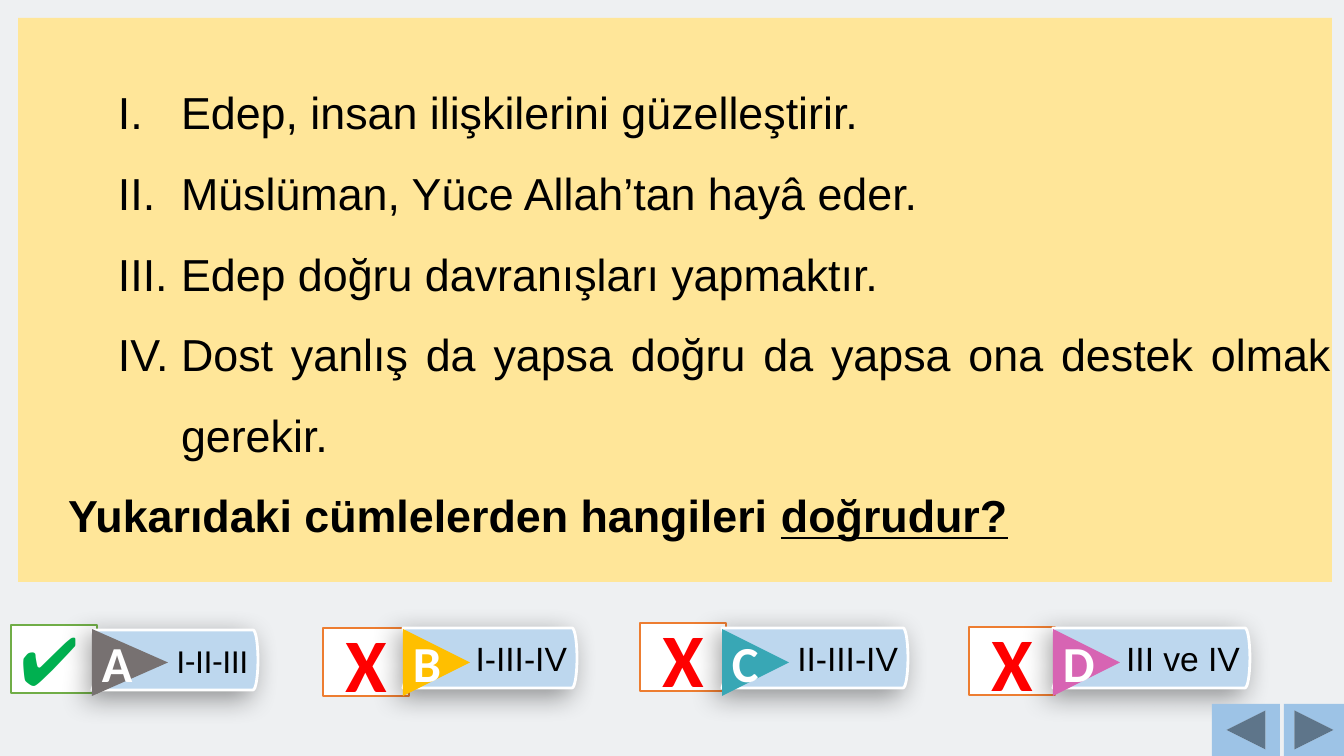
"""Build a multiple-choice quiz slide with four marked answers."""
from math import cos, pi, sin

from lxml.etree import SubElement
from pptx import Presentation
from pptx.dml.color import RGBColor
from pptx.enum.shapes import MSO_SHAPE
from pptx.enum.text import MSO_ANCHOR, PP_ALIGN
from pptx.oxml.ns import qn
from pptx.util import Pt

SCALE = 914400 / 100.8
STATEMENTS = [
    "Edep, insan ilişkilerini güzelleştirir.",
    "Müslüman, Yüce Allah’tan hayâ eder.",
    "Edep doğru davranışları yapmaktır.",
    "Dost yanlış da yapsa doğru da yapsa ona destek olmak gerekir.",
]
CHECK = ("✔", 48, "00B050", "70AD47", False, PP_ALIGN.LEFT)
CROSS = ("X", 54, "FF0000", "ED7D31", True, PP_ALIGN.CENTER)
OPTIONS = [
    ("A", "I-II-III", "Calibri", "777171", CHECK, (11, 625), (92, 630, 166), (92, 629, 76)),
    ("B", "I-III-IV", "Arial", "FFBF00", CROSS, (323, 628), (403, 628, 174), (403, 629, 67)),
    ("C", "II-III-IV", "Arial", "38A7B5", CROSS, (640, 623), (722, 628, 186), (722, 629, 67)),
    ("D", "III ve IV", "Arial", "D764B3", CROSS, (969, 627), (1053, 628, 197), (1053, 629, 67)),
]


def px(n):
    """Turn pixels into EMU."""
    return round(n * SCALE)


def color(value):
    """Turn a hex string into a colour."""
    return RGBColor.from_string(value)


def style(sp, fill, line=None, width=1):
    """Give a shape a plain fill, an optional line and no shadow."""
    sp.shadow.inherit = False
    sp.fill.solid()
    sp.fill.fore_color.rgb = color(fill)
    if line:
        sp.line.color.rgb = color(line)
        sp.line.width = Pt(width)
    else:
        sp.line.fill.background()


def add_box(shapes, kind, x, y, w, h, fill, line=None):
    """Add a preset shape."""
    sp = shapes.add_shape(kind, px(x), px(y), px(w), px(h))
    style(sp, fill, line)
    return sp


def add_run(p, text, size, font, ink, bold=False, underline=False):
    """Add one formatted run to a paragraph."""
    r = p.add_run()
    r.text = text
    r.font.size = Pt(size)
    r.font.name = font
    r.font.color.rgb = color(ink)
    r.font.bold = bold
    r.font.underline = underline


def add_label(sp, text, size, font, ink, bold=False, align=PP_ALIGN.CENTER):
    """Put one vertically centred line of text in a shape."""
    tf = sp.text_frame
    tf.word_wrap = True
    tf.vertical_anchor = MSO_ANCHOR.MIDDLE
    p = tf.paragraphs[0]
    p.alignment = align
    add_run(p, text, size, font, ink, bold)


def set_indent(p, left, first=0):
    """Set the left margin and first-line indent of a paragraph."""
    pPr = p._p.get_or_add_pPr()
    pPr.set("marL", str(px(left)))
    pPr.set("indent", str(px(first)))
    return pPr


def add_question(s):
    """Add the panel with numbered statements and the question."""
    sp = add_box(s.shapes, MSO_SHAPE.RECTANGLE, 18, 18, 1314, 564, "FFE699")
    tf = sp.text_frame
    tf.word_wrap = True
    tf.vertical_anchor = MSO_ANCHOR.MIDDLE
    tf.margin_left = tf.margin_right = tf.margin_top = tf.margin_bottom = 0
    for i, text in enumerate(STATEMENTS):
        p = tf.add_paragraph() if i else tf.paragraphs[0]
        p.alignment = PP_ALIGN.JUSTIFY
        p.line_spacing = 1.5
        pPr = set_indent(p, 163, -63)
        SubElement(pPr, qn("a:buFont"), typeface="+mj-lt")
        SubElement(pPr, qn("a:buAutoNum"), type="romanUcPeriod")
        add_run(p, text, 32, "Arial", "000000")
    p = tf.add_paragraph()
    p.alignment = PP_ALIGN.LEFT
    p.line_spacing = 1.5
    set_indent(p, 50)
    add_run(p, "Yukarıdaki cümlelerden hangileri ", 32, "Arial", "000000", True)
    add_run(p, "doğrudur?", 32, "Arial", "000000", True, True)


def add_shadow(sp):
    """Add a soft shadow towards the lower left."""
    effects = sp._element.spPr.find(qn("a:effectLst"))
    shadow = SubElement(effects, qn("a:outerShdw"), blurRad=str(Pt(20)), dist=str(Pt(7)),
                        dir="8100000", algn="tr", rotWithShape="0")
    ink = SubElement(shadow, qn("a:srgbClr"), val="000000")
    SubElement(ink, qn("a:alpha"), val="40000")


def add_tag(shapes, x, y, w, text, font):
    """Add an answer tag with a notched left end and a bowed right end."""
    h, bow, notch = 60, 5, 9
    steps = 16
    angles = [pi * i / steps - pi / 2 for i in range(steps + 1)]
    points = [(x + w - bow + bow * cos(a), y + h / 2 + h / 2 * sin(a)) for a in angles]
    points += [(x, y + h), (x + notch, y + h / 2)]
    builder = shapes.build_freeform(px(x), px(y))
    builder.add_line_segments([(px(a), px(b)) for a, b in points], close=True)
    sp = builder.convert_to_shape()
    style(sp, "BDD7EE", "FFFFFF", 2)
    add_shadow(sp)
    add_label(sp, text, 24, font, "000000", align=PP_ALIGN.RIGHT)


def add_pointer(shapes, x, y, length, letter, fill):
    """Add a right-pointing triangle with an upright letter."""
    side = 67
    shift = (length - side) / 2
    sp = add_box(shapes, MSO_SHAPE.ISOSCELES_TRIANGLE, x + shift, y - shift, side, length, fill)
    sp.rotation = 90
    add_label(sp, letter, 36, "Calibri", "FFFFFF", True)
    sp.text_frame._txBody.bodyPr.set("vert", "vert270")


def add_option(s, letter, text, font, fill, mark, mark_at, tag_at, pointer_at):
    """Add one answer with its mark, tag and lettered pointer."""
    symbol, size, ink, line, bold, align = mark
    sp = add_box(s.shapes, MSO_SHAPE.RECTANGLE, *mark_at, 86, 68, "FFFFFF", line)
    add_label(sp, symbol, size, "Calibri", ink, bold, align)
    group = s.shapes.add_group_shape()
    add_tag(group.shapes, *tag_at, text, font)
    add_pointer(group.shapes, *pointer_at, letter, fill)


def main():
    """Build and save the slide."""
    prs = Presentation()
    prs.slide_width, prs.slide_height = px(1344), px(756)
    s = prs.slides.add_slide(prs.slide_layouts[6])
    s.background.fill.solid()
    s.background.fill.fore_color.rgb = color("EEF0F2")
    add_question(s)
    for option in OPTIONS:
        add_option(s, *option)
    add_box(s.shapes, MSO_SHAPE.ACTION_BUTTON_BACK_OR_PREVIOUS, 1212, 704, 68, 52, "9DC3E6")
    add_box(s.shapes, MSO_SHAPE.ACTION_BUTTON_FORWARD_OR_NEXT, 1284, 704, 60, 52, "9DC3E6")
    prs.save("out.pptx")


if __name__ == "__main__":
    main()
